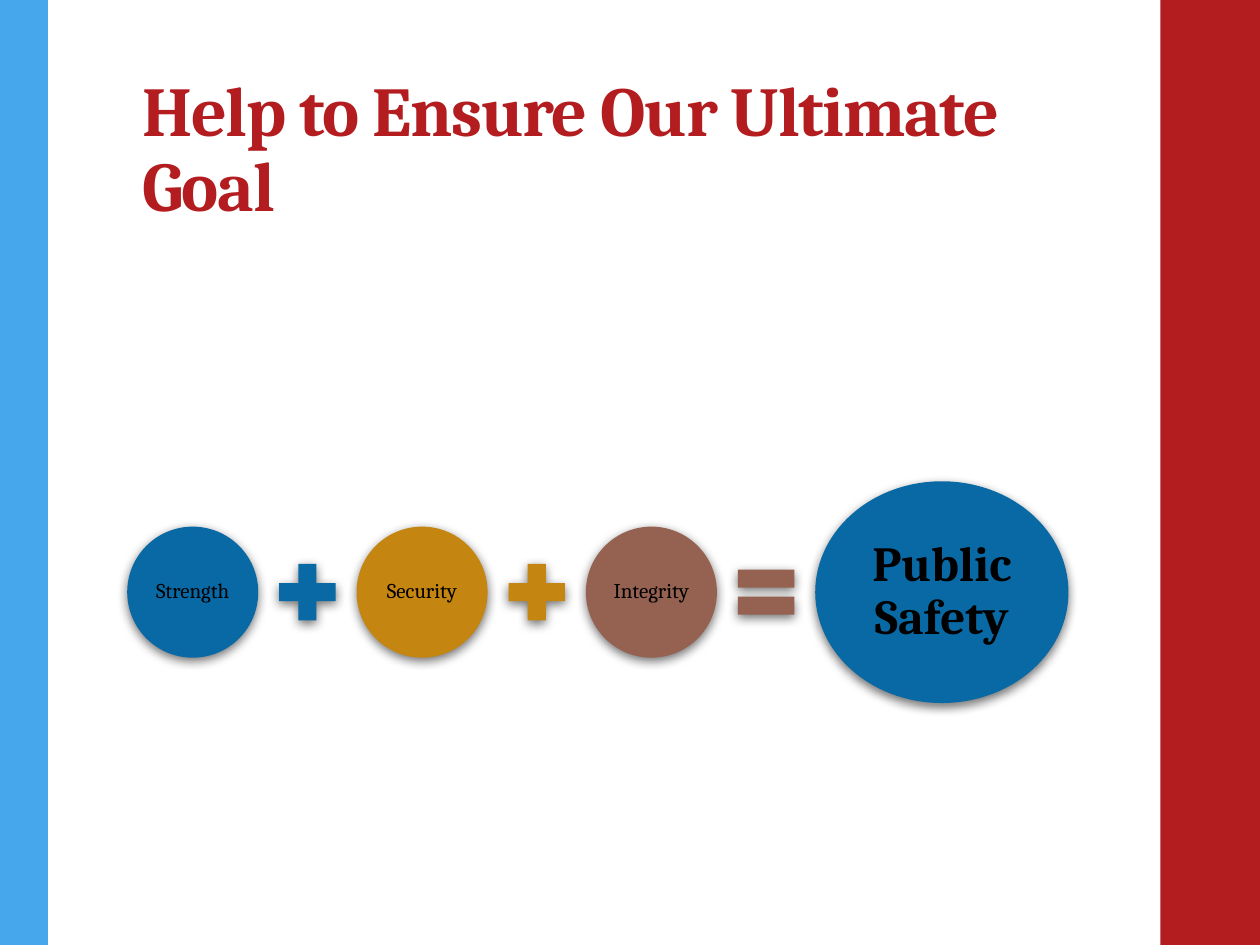
from lxml import etree
from pptx import Presentation, util as u
from pptx.dml.color import RGBColor
from pptx.enum import shapes, text
from pptx.oxml import ns

WIDE, HIGH = 10, 7.5
RED, SKY, BLUE, GOLD, BROWN = "B31D1F", "46A7ED", "0969A5", "C48511", "956251"
KIND = shapes.MSO_SHAPE

deck = Presentation()
deck.slide_width, deck.slide_height = u.Inches(WIDE), u.Inches(HIGH)
slide = deck.slides.add_slide(deck.slide_layouts[6])


def draw(kind, left, top, wide, high, fill, shade=False):
    form = slide.shapes.add_shape(kind, *map(u.Inches, (left, top, wide, high)))
    form.fill.solid()
    form.fill.fore_color.rgb = RGBColor.from_string(fill)
    form.line.fill.background()
    form.shadow.inherit = False
    if shade:
        glow = form.element.spPr.find(ns.qn("a:effectLst"))
        cast = etree.SubElement(glow, ns.qn("a:outerShdw"), blurRad=str(u.Pt(6)),
                                dist=str(u.Pt(2)), dir="5400000", rotWithShape="0")
        tint = etree.SubElement(cast, ns.qn("a:srgbClr"), val="000000")
        etree.SubElement(tint, ns.qn("a:alpha"), val="55000")
    return form


def write(form, words, size, color="000000", bold=False, inset=0.02, space=0,
          align=text.PP_ALIGN.CENTER, anchor=text.MSO_ANCHOR.MIDDLE):
    frame = form.text_frame
    frame.word_wrap = True
    frame.vertical_anchor = anchor
    frame.margin_left = frame.margin_right = u.Inches(inset)
    frame.margin_top = frame.margin_bottom = u.Inches(min(inset, 0.05))
    para = frame.paragraphs[0]
    para.alignment, para.line_spacing = align, 0.9
    run = para.add_run()
    run.text = words
    run.font.name, run.font.size, run.font.bold = "Cambria", u.Pt(size), bold
    run.font.color.rgb = RGBColor.from_string(color)
    if space:
        run.font._element.set("spc", str(space))


# Side bars
draw(KIND.RECTANGLE, 9.21, 0, WIDE - 9.21, HIGH, RED)
draw(KIND.RECTANGLE, 0, 0, 0.38, HIGH, SKY)

# Title
title = slide.shapes.add_textbox(*map(u.Inches, (1.03, 0.4, 7.95, 1.45)))
write(title, "Help to Ensure Our Ultimate Goal", 40, color=RED, bold=True,
      inset=0.1, space=-70, align=text.PP_ALIGN.LEFT,
      anchor=text.MSO_ANCHOR.BOTTOM)

# Sum: circles and signs take turns on equal columns, centred on one row
LEFT, COL, ROW = 1.01, 0.91, 4.7
DISC, SIGN = 1.04, 0.61
terms = [("Strength", BLUE, KIND.MATH_PLUS),
         ("Security", GOLD, KIND.MATH_PLUS),
         ("Integrity", BROWN, KIND.MATH_EQUAL)]
for i, (word, fill, sign) in enumerate(terms):
    left = LEFT + 2 * i * COL
    disc = draw(KIND.OVAL, left, ROW - DISC / 2, DISC, DISC, fill, shade=True)
    write(disc, word, 12)
    draw(sign, left + COL + (DISC - SIGN) / 2, ROW - SIGN / 2, SIGN, SIGN,
         fill, shade=True)

# Result
wide, high = 2.01, 1.76
goal = draw(KIND.OVAL, LEFT + 2 * len(terms) * COL, ROW - high / 2, wide, high,
            BLUE, shade=True)
write(goal, "Public Safety", 28, bold=True, inset=0.04)

deck.save("out.pptx")
